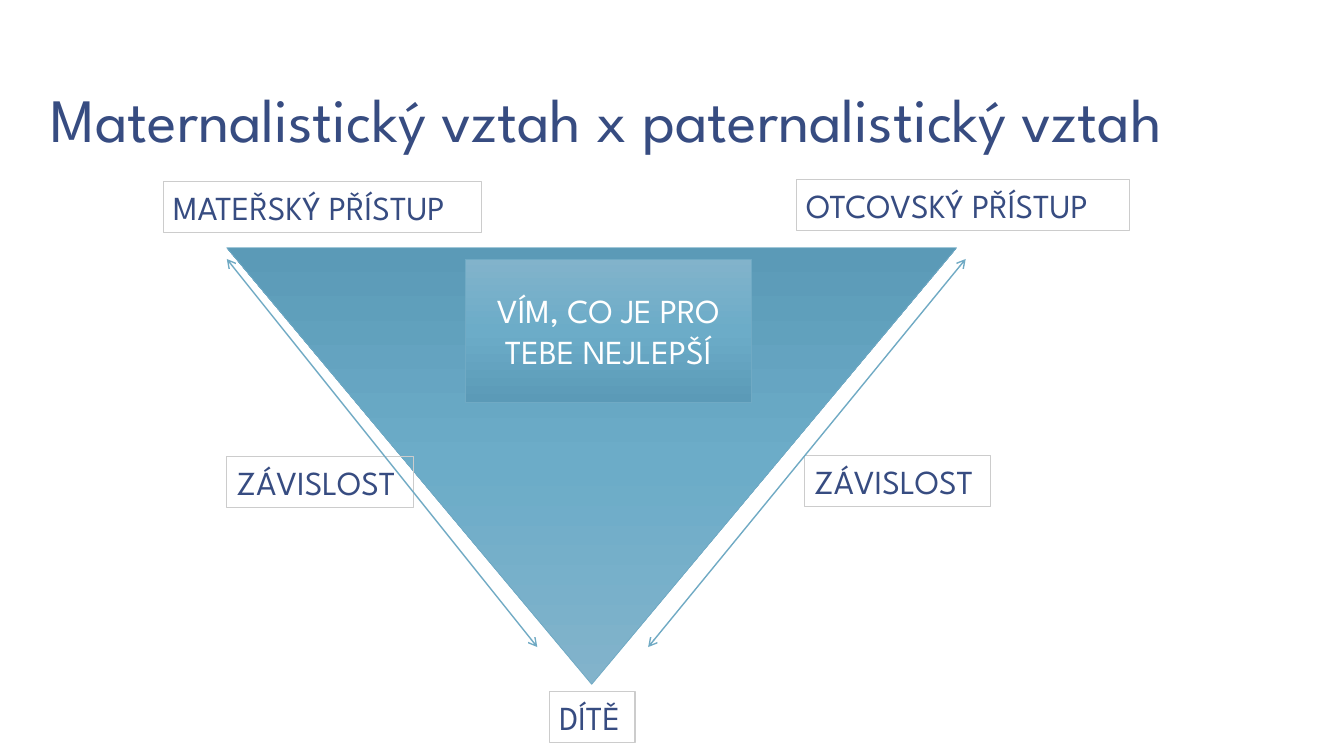
from copy import deepcopy

from lxml import etree
from pptx import Presentation
from pptx.dml.color import RGBColor
from pptx.enum import shapes as sh, text as tx
from pptx.oxml.ns import qn
from pptx.util import Pt

NAVY, BLUE, GREY, WHITE = "374C81", "70AAC4", "CCCCCC", "FFFFFF"
GRADIENT = [(0, "82B3CB"), (0.5, "6CACC8"), (1, "5B9AB7")]


def rgb(value):
    return RGBColor.from_string(value)


def style_text(frame, words, size, color, align, anchor):
    frame.text = words
    frame.word_wrap = True
    frame.vertical_anchor = anchor
    paragraph = frame.paragraphs[0]
    paragraph.alignment = align
    paragraph.font.name = "League Spartan"
    paragraph.font.size = Pt(size)
    paragraph.font.color.rgb = rgb(color)


prs = Presentation()
prs.slide_width, prs.slide_height = Pt(960), Pt(540)
slide = prs.slides.add_slide(prs.slide_layouts[5])

# Title
title = slide.shapes.title
title.left, title.top, title.width, title.height = Pt(26.6), Pt(5.8), Pt(933), Pt(110)
heading = title.text_frame
style_text(heading, "Maternalistický vztah x paternalistický vztah", 44, NAVY,
           tx.PP_ALIGN.LEFT, tx.MSO_ANCHOR.BOTTOM)
heading.auto_size = tx.MSO_AUTO_SIZE.NONE
heading.margin_left = heading.margin_right = Pt(9.4)
heading.margin_top = heading.margin_bottom = Pt(5)
heading.paragraphs[0].line_spacing = 0.85

# Inverted triangle of the relationship
triangle = slide.shapes.add_shape(sh.MSO_SHAPE.ISOSCELES_TRIANGLE,
                                  Pt(162), Pt(177), Pt(521.3), Pt(311.8))
triangle.rotation = 180

# Boxes naming the corners and the sides
for words, left, top, width in [
    ("DÍTĚ", 392.4, 493.9, 61.2),
    ("OTCOVSKÝ PŘÍSTUP", 568.8, 128.2, 238.3),
    ("MATEŘSKÝ PŘÍSTUP", 116.6, 129.6, 227.5),
    ("ZÁVISLOST", 574.6, 325.4, 133.2),
    ("ZÁVISLOST", 162, 326.2, 133.2),
]:
    label = slide.shapes.add_shape(sh.MSO_SHAPE.RECTANGLE,
                                   Pt(left), Pt(top), Pt(width), Pt(36.4))
    label.shadow.inherit = False
    label.fill.background()
    label.line.color.rgb = rgb(GREY)
    label.line.width = Pt(0.75)
    style_text(label.text_frame, words, 24, NAVY,
               tx.PP_ALIGN.LEFT, tx.MSO_ANCHOR.MIDDLE)

# Two-way dependency arrows along the sides
for parent_x, child_x in [(162, 383.8), (689.8, 463)]:
    dependency = slide.shapes.add_connector(
        sh.MSO_CONNECTOR.STRAIGHT, Pt(parent_x), Pt(185), Pt(child_x), Pt(462.2))
    dependency.line.color.rgb = rgb(BLUE)
    dependency.line.width = Pt(1)
    properties = dependency._element.spPr
    for end in ("a:headEnd", "a:tailEnd"):
        etree.SubElement(properties.find(qn("a:ln")), qn(end), type="arrow")
    etree.SubElement(properties, qn("a:effectLst"))

# Shared message inside the triangle
message = slide.shapes.add_shape(sh.MSO_SHAPE.RECTANGLE,
                                 Pt(332.6), Pt(185), Pt(203.8), Pt(102.2))
style_text(message.text_frame, "VÍM, CO JE PRO TEBE NEJLEPŠÍ", 24, WHITE,
           tx.PP_ALIGN.CENTER, tx.MSO_ANCHOR.MIDDLE)

# Three-stop gradient, running downwards in each shape's own frame
for area in (triangle, message):
    area.shadow.inherit = False
    area.line.color.rgb = rgb(BLUE)
    area.line.width = Pt(0.5)
    area.fill.gradient()
    area.fill.gradient_angle = 270
    stop_list = area._element.spPr.find(".//" + qn("a:gsLst"))
    stop_list.append(deepcopy(stop_list[0]))
    for stop, (position, color) in zip(area.fill.gradient_stops, GRADIENT):
        stop.position = position
        stop.color.rgb = rgb(color)

prs.save("out.pptx")
